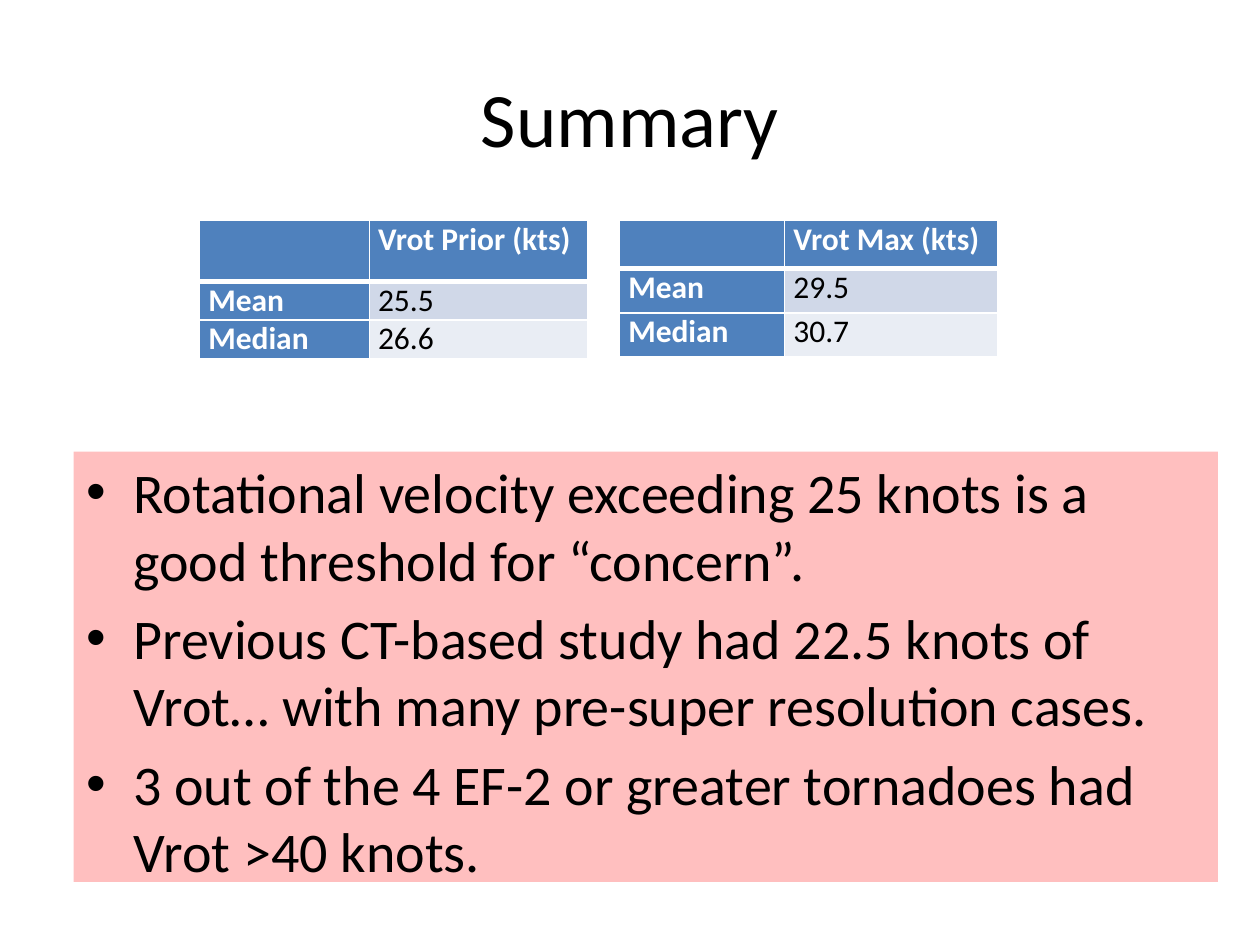
from typing import NamedTuple

from lxml.etree import SubElement, fromstring
from pptx import Presentation
from pptx.dml.color import RGBColor
from pptx.enum.text import MSO_ANCHOR as Anchor, MSO_AUTO_SIZE as Fit, PP_ALIGN as Align
from pptx.oxml.ns import nsdecls, qn
from pptx.util import Inches, Pt

HEX = {
    "ink": "000000",
    "paper": "FFFFFF",
    "head": "4F81BD",
    "odd": "D0D8E8",
    "even": "E9EDF4",
    "alert": "FF0000",
}
UNIT = Inches(1 / 12)  # the slide is a grid of 120 columns by 90 rows
COLS, ROWS = 120, 90
FONT = "Calibri"


class Box(NamedTuple):
    x: float
    y: float
    w: float
    h: float


class Stat(NamedTuple):
    box: Box
    top: float  # height of the header row, in grid rows
    name: str
    mean: str
    median: str


TITLE = Box(6, 3.6, 108, 15)
LIST = Box(7, 43, 109, 41)
STATS = [
    Stat(Box(19, 21, 37, 13), 5.8, "Vrot Prior (kts)", "25.5", "26.6"),
    Stat(Box(59, 21, 36, 13), 4.6, "Vrot Max (kts)", "29.5", "30.7"),
]
SPLIT = 0.437  # share of a table's width taken by its label column
POINTS = [
    "Rotational velocity exceeding 25 knots is a good threshold for “concern”.",
    "Previous CT-based study had 22.5 knots of Vrot… with many pre-super resolution cases.",
    "3 out of the 4 EF-2 or greater tornadoes had Vrot >40 knots.",
]


def grid(n: float) -> int:
    return round(n * UNIT)


def rgb(name: str) -> RGBColor:
    return RGBColor.from_string(HEX[name])


def place(shape, box: Box) -> None:
    shape.left, shape.top, shape.width, shape.height = map(grid, box)


def write(frame, *lines: str, size: float, color: str = "ink",
          bold: bool = False, align=Align.LEFT) -> None:
    """Fill a text frame, one paragraph a line."""
    frame.text = "\n".join(lines)
    for para in frame.paragraphs:
        para.alignment = align
        font = para.font
        font.name, font.size, font.bold = FONT, Pt(size), bold
        font.color.rgb = rgb(color)
        for run in para.runs:
            run.font.name, run.font.size, run.font.bold = FONT, Pt(size), bold
            run.font.color.rgb = rgb(color)


def edge(cell, base: float) -> None:
    """Draw white borders, the bottom one base points wide."""
    props = cell._tc.get_or_add_tcPr()
    widths = {"lnL": 1, "lnR": 1, "lnT": 1, "lnB": base}
    for spot, (tag, width) in enumerate(widths.items()):
        props.insert(spot, fromstring(
            f'<a:{tag} {nsdecls("a")} w="{Pt(width)}"><a:solidFill>'
            f'<a:srgbClr val="{HEX["paper"]}"/></a:solidFill></a:{tag}>'))


def draw_stat(slide, stat: Stat) -> None:
    box = stat.box
    table = slide.shapes.add_table(3, 2, *map(grid, box)).table
    table.first_row = table.horz_banding = False
    for col, share in zip(table.columns, (SPLIT, 1 - SPLIT)):
        col.width = grid(box.w * share)
    rest = (box.h - stat.top) / 2
    for row, height in zip(table.rows, (stat.top, rest, rest)):
        row.height = grid(height)
    texts = [("", stat.name), ("Mean", stat.mean), ("Median", stat.median)]
    for r, (line, band) in enumerate(zip(texts, ("head", "odd", "even"))):
        for c, text in enumerate(line):
            cell = table.cell(r, c)
            label = r == 0 or c == 0
            cell.margin_left = cell.margin_right = Inches(0.07)
            cell.margin_top = cell.margin_bottom = 0
            cell.fill.solid()
            cell.fill.fore_color.rgb = rgb("head" if label else band)
            edge(cell, 3 if r == 0 else 1)
            write(cell.text_frame, text, size=18, bold=label,
                  color="paper" if label else "ink")


def draw_list(body) -> None:
    place(body, LIST)
    body.fill.solid()
    body.fill.fore_color.rgb = rgb("alert")
    tint = body.fill._xPr.find(".//" + qn("a:srgbClr"))
    SubElement(tint, qn("a:alpha")).set("val", "25000")
    frame = body.text_frame
    frame.auto_size, frame.word_wrap = Fit.NONE, True
    write(frame, *POINTS, size=32)
    frame.paragraphs[0].space_before = Pt(0)


def main() -> None:
    deck = Presentation()
    deck.slide_width, deck.slide_height = grid(COLS), grid(ROWS)
    slide = deck.slides.add_slide(deck.slide_layouts[1])
    title, body = slide.placeholders
    place(title, TITLE)
    title.text_frame.vertical_anchor = Anchor.MIDDLE
    write(title.text_frame, "Summary", size=44, align=Align.CENTER)
    draw_list(body)
    for stat in STATS:
        draw_stat(slide, stat)
    deck.save("out.pptx")


if __name__ == "__main__":
    main()
